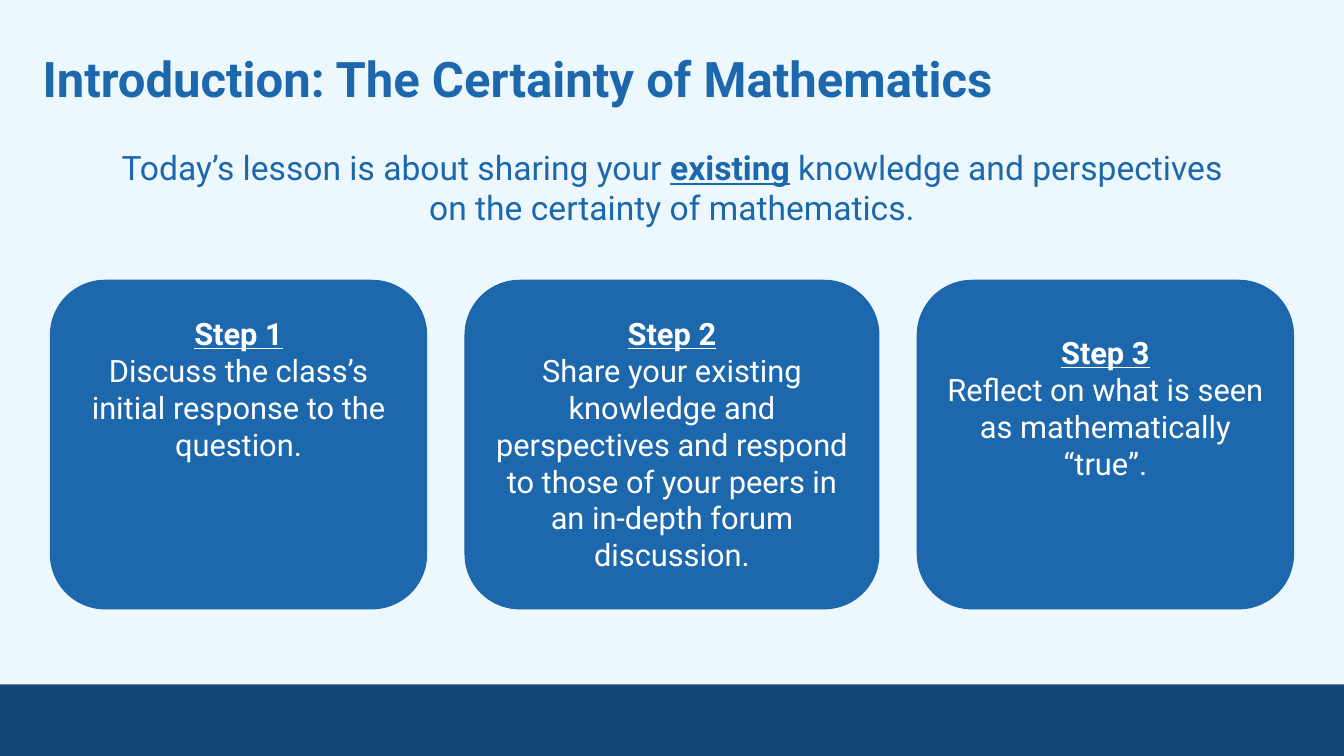
from dataclasses import dataclass
from pptx import Presentation
from pptx.dml.color import RGBColor
from pptx.enum.shapes import MSO_SHAPE
from pptx.enum.text import MSO_ANCHOR, PP_ALIGN
from pptx.shapes.autoshape import Shape
from pptx.slide import Slide
from pptx.util import Inches, Pt

RECT, ROUND = MSO_SHAPE.RECTANGLE, MSO_SHAPE.ROUNDED_RECTANGLE
TOP = MSO_ANCHOR.TOP
LEFT, MID = PP_ALIGN.LEFT, PP_ALIGN.CENTER
SKY = RGBColor(0xEC, 0xF8, 0xFE)
BLUE = RGBColor(0x1D, 0x67, 0xAC)
NAVY = RGBColor(0x14, 0x47, 0x77)
WHITE = RGBColor(0xFF, 0xFF, 0xFF)
FONT = "Roboto"
WIDE, HIGH = Inches(13.33), Inches(7.5)
EDGE = 3.75
SIDE, CORE = 28, 30.8
GAP = (100 - 2 * EDGE - 2 * SIDE - CORE) / 2


@dataclass
class Box:
    left: float
    top: float
    width: float
    height: float

    def place(self) -> tuple[int, int, int, int]:
        return (int(WIDE * self.left / 100), int(HIGH * self.top / 100),
                int(WIDE * self.width / 100), int(HIGH * self.height / 100))


@dataclass
class Part:
    text: str
    strong: bool = False


@dataclass
class Step:
    text: str
    width: float
    inset: float


STEPS = [
    Step("Discuss the class’s initial response to the question.", SIDE, 0.18),
    Step("Share your existing knowledge and perspectives and respond to those "
         "of your peers in an in-depth forum discussion.", CORE, 0.18),
    Step("Reflect on what is seen as mathematically “true”.", SIDE, 0.37),
]


def add_block(slide: Slide, kind: MSO_SHAPE, box: Box, tint: RGBColor) -> Shape:
    block = slide.shapes.add_shape(kind, *box.place())
    block.shadow.inherit = False
    block.fill.solid()
    block.fill.fore_color.rgb = tint
    block.line.color.rgb = tint
    block.line.width = Pt(0.75)
    return block


def write(shape: Shape, lines: list[list[Part]], size: float, tint: RGBColor,
          align: PP_ALIGN, inset: float, top: float) -> None:
    frame = shape.text_frame
    frame.word_wrap = True
    frame.vertical_anchor = TOP
    frame.margin_left = frame.margin_right = frame.margin_bottom = Inches(inset)
    frame.margin_top = Inches(top)
    for row, parts in enumerate(lines):
        para = frame.add_paragraph() if row else frame.paragraphs[0]
        para.alignment = align
        para.font.name = FONT
        para.font.size = Pt(size)
        para.font.color.rgb = tint
        for part in parts:
            run = para.add_run()
            run.text = part.text
            if part.strong:
                run.font.bold = run.font.underline = True


def add_title(slide: Slide) -> None:
    title = slide.shapes.add_textbox(*Box(2.2, 4.7, 91.4, 11.5).place())
    write(title, [[Part("Introduction: The Certainty of Mathematics")]],
          35, BLUE, LEFT, 0.13, 0.13)
    title.text_frame.paragraphs[0].font.bold = True


def add_intro(slide: Slide) -> None:
    intro = slide.shapes.add_textbox(*Box(6.85, 18.1, 86.3, 24.3).place())
    parts = [Part("Today’s lesson is about sharing your "),
             Part("existing", True),
             Part(" knowledge and perspectives on the certainty of mathematics.")]
    write(intro, [parts], 24, BLUE, MID, 0.1, 0.1)


def add_steps(slide: Slide) -> None:
    left = EDGE
    for count, step in enumerate(STEPS, 1):
        card = add_block(slide, ROUND, Box(left, 37.07, step.width, 43.47), BLUE)
        lines = [[Part(f"Step {count}", True)], [Part(step.text)]]
        write(card, lines, 22, WHITE, MID, 0.1, step.inset)
        left += step.width + GAP


def main() -> None:
    deck = Presentation()
    deck.slide_width, deck.slide_height = WIDE, HIGH
    slide = deck.slides.add_slide(deck.slide_layouts[6])
    slide.background.fill.solid()
    slide.background.fill.fore_color.rgb = SKY
    band = add_block(slide, RECT, Box(0, 90.53, 100, 9.47), NAVY)
    band.line.fill.background()
    add_title(slide)
    add_intro(slide)
    add_steps(slide)
    deck.save("out.pptx")


if __name__ == "__main__":
    main()
